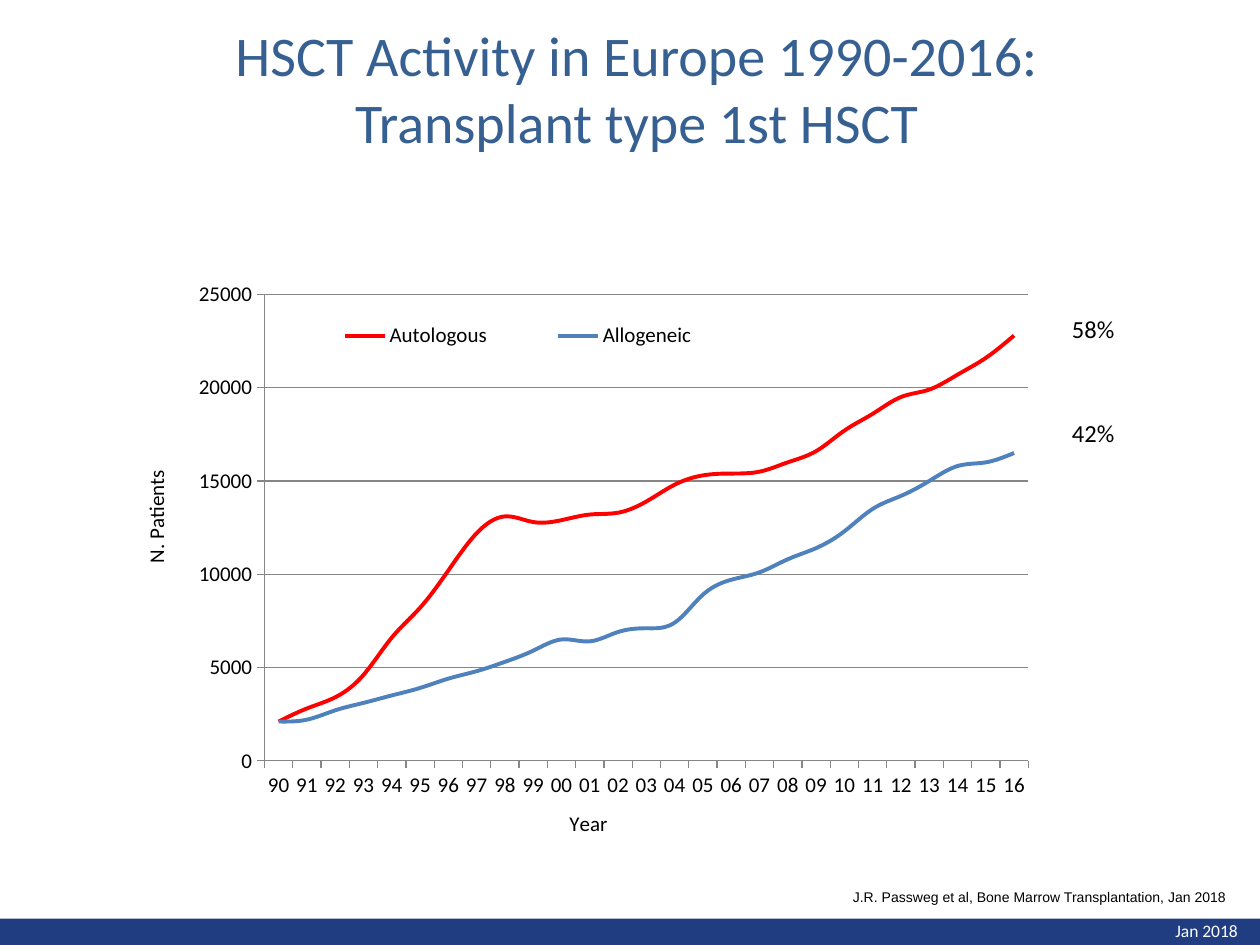
from lxml.etree import SubElement
from pptx import Presentation
from pptx.chart.data import CategoryChartData
from pptx.dml.color import RGBColor
from pptx.enum.chart import XL_CHART_TYPE, XL_LEGEND_POSITION, XL_TICK_MARK
from pptx.enum.shapes import MSO_SHAPE
from pptx.enum.text import MSO_ANCHOR, PP_ALIGN
from pptx.oxml.ns import qn
from pptx.util import Inches, Pt

COLORS = {name: RGBColor.from_string(value) for name, value in {
    "bar": "213D82", "title": "376092", "white": "FFFFFF", "black": "000000",
    "autologous": "FF0000", "allogeneic": "4F81BD", "grid": "868686",
}.items()}


def add_text(text, left, top, width, height, size, color="black", font="Calibri",
             align=PP_ALIGN.LEFT, anchor=MSO_ANCHOR.TOP, wrap=False, gap=0):
    box = slide.shapes.add_textbox(Inches(left), Inches(top), Inches(width), Inches(height))
    frame = box.text_frame
    frame.word_wrap = wrap
    frame.vertical_anchor = anchor
    frame.text = text
    for index, paragraph in enumerate(frame.paragraphs):
        paragraph.alignment = align
        if index:
            paragraph.space_before = Pt(gap)
        paragraph.font.size = Pt(size)
        paragraph.font.name = font
        paragraph.font.color.rgb = COLORS[color]


def place(element, index, **settings):
    """Give a chart part a manual layout, in fractions of the chart."""
    for old in element.findall(qn("c:layout")):
        element.remove(old)
    layout = SubElement(element, qn("c:layout"))
    manual = SubElement(layout, qn("c:manualLayout"))
    for name, value in settings.items():
        SubElement(manual, qn(f"c:{name}")).set("val", str(value))
    element.insert(index, layout)


presentation = Presentation()
presentation.slide_width = Inches(10)
presentation.slide_height = Inches(7.5)
slide = presentation.slides.add_slide(presentation.slide_layouts[6])

# Footer bar
bar = slide.shapes.add_shape(MSO_SHAPE.RECTANGLE, Inches(0), Inches(7.29), Inches(10), Inches(0.24))
bar.shadow.inherit = False
bar.fill.solid()
bar.fill.fore_color.rgb = COLORS["bar"]
bar.line.fill.background()
add_text("Jan 2018", 9.23, 7.25, 0.71, 0.27, 10, color="white")

# Title
add_text("HSCT Activity in Europe 1990-2016:\nTransplant type 1st HSCT", 0, 0.05, 10.11, 1.23, 32,
         color="title", align=PP_ALIGN.CENTER, anchor=MSO_ANCHOR.BOTTOM, wrap=True)

# Line chart of patients per year
chart_data = CategoryChartData()
chart_data.categories = [f"{year % 100:02}" for year in range(1990, 2017)]
chart_data.add_series("Autologous", [
    2100, 2800, 3400, 4600, 6600, 8200, 10200, 12200, 13100, 12800, 12900, 13200, 13300, 13900,
    14800, 15300, 15400, 15500, 16000, 16600, 17700, 18600, 19500, 19900, 20700, 21600, 22800])
chart_data.add_series("Allogeneic", [
    2100, 2200, 2700, 3100, 3500, 3900, 4400, 4800, 5300, 5900, 6500, 6400, 6900, 7100,
    7400, 8900, 9700, 10100, 10800, 11400, 12300, 13500, 14200, 15000, 15800, 16000, 16500])
chart = slide.shapes.add_chart(XL_CHART_TYPE.LINE, Inches(0.87), Inches(2.05),
                               Inches(7.54), Inches(4.72), chart_data).chart
chart.has_title = False
chart.font.size = Pt(12)
chart.font.name = "Calibri"
chart.font.color.rgb = COLORS["black"]
chart.plots[0].vary_by_categories = False
place(chart.element.find(".//" + qn("c:plotArea")), 0, layoutTarget="inner",
      xMode="edge", yMode="edge", x=0.163, y=0.061, w=0.804, h=0.784)

for series in chart.plots[0].series:
    series.smooth = True
    series.format.line.width = Pt(2.25)
    series.format.line.color.rgb = COLORS[series.name.lower()]

# Axes and their titles
for axis, title, rotation, x, y in [
    (chart.category_axis, "Year", 0, 0.48, 0.92),
    (chart.value_axis, "N. Patients", -5400000, 0.03, 0.35),
]:
    axis.major_tick_mark = XL_TICK_MARK.OUTSIDE
    axis.format.line.color.rgb = COLORS["grid"]
    axis.format.line.width = Pt(0.75)
    frame = axis.axis_title.text_frame
    frame.text = title
    font = frame.paragraphs[0].font
    font.size = Pt(12)
    font.bold = False
    font.name = "Calibri"
    font.color.rgb = COLORS["black"]
    title_element = axis.axis_title.format.element if hasattr(axis.axis_title.format, "element") \
        else chart.element.findall(".//" + qn("c:title"))[0 if title == "Year" else 1]
    title_element.find(".//" + qn("a:bodyPr")).set("rot", str(rotation))
    place(title_element, 1, xMode="edge", yMode="edge", x=x, y=y)
value_axis = chart.value_axis
value_axis.minimum_scale = 0
value_axis.maximum_scale = 25000
value_axis.major_unit = 5000
value_axis.major_gridlines.format.line.color.rgb = COLORS["grid"]
value_axis.major_gridlines.format.line.width = Pt(0.75)

# Legend inside the plot
chart.has_legend = True
chart.legend.position = XL_LEGEND_POSITION.RIGHT
chart.legend.include_in_layout = False
place(chart.element.find(".//" + qn("c:legend")), 1,
      xMode="edge", yMode="edge", x=0.18, y=0.09, w=0.5, h=0.08)

# Shares at the line ends
add_text("58%\n42%", 8.41, 2.44, 0.54, 1.18, 14, gap=43)

# Citation
add_text("J.R. Passweg et al, Bone Marrow Transplantation, Jan 2018", 6.67, 7, 3.21, 0.24, 8, font="Arial")

presentation.save("out.pptx")
